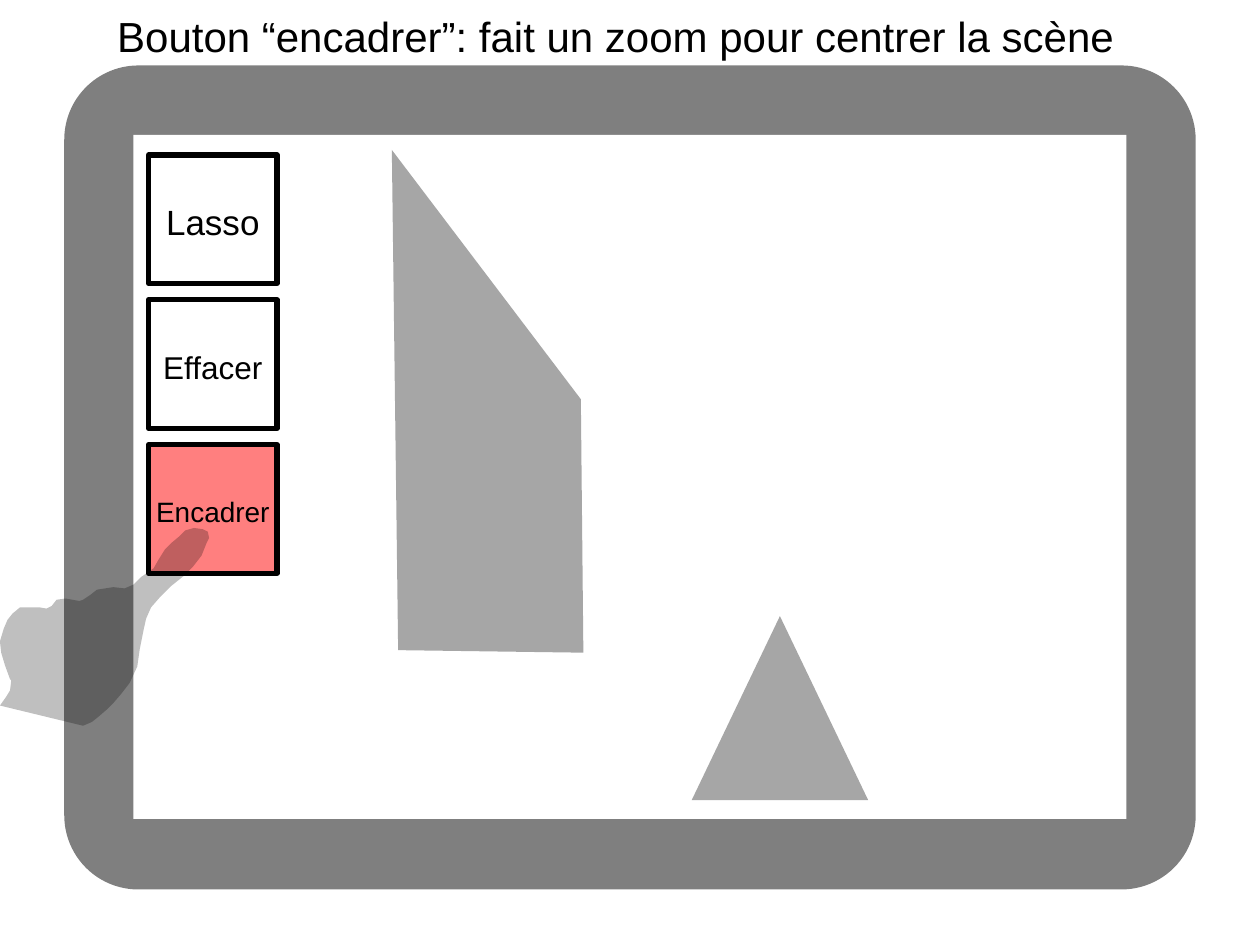
from collections import namedtuple

from lxml.etree import SubElement
from pptx import Presentation
from pptx.dml.color import RGBColor
from pptx.enum.shapes import MSO_SHAPE
from pptx.enum.text import MSO_ANCHOR, MSO_AUTO_SIZE, PP_ALIGN
from pptx.oxml.ns import qn
from pptx.util import Inches, Pt

COLORS = {"ink": "000000", "paper": "FFFFFF", "solid": "A6A6A6", "active": "FF0000"}
FONT = "Arial"
BUTTONS = [("Lasso", 20, "paper"), ("Effacer", 18, "paper"), ("Encadrer", 16, "active")]

# Outlines, each on its own grid of columns and rows
TOWER = [(3.3, 99.5), (0, 0), (98.7, 49.6), (100, 100)]
HAND = [
    (66, 157), (73, 154), (78, 150), (85, 144), (90, 139), (96, 132), (103, 123),
    (109, 110), (111, 96), (114, 81), (116, 72), (120, 63), (127, 55), (136, 46),
    (146, 38), (153, 31), (160, 22), (164, 12), (166, 8), (165, 3), (161, 1),
    (154, 0), (147, 2), (142, 7), (136, 12), (131, 17), (126, 25), (122, 32),
    (112, 39), (106, 45), (99, 48), (90, 47), (77, 49), (72, 53), (66, 57),
    (63, 58), (52, 56), (45, 57), (41, 62), (37, 64), (31, 63), (16, 63),
    (10, 68), (6, 73), (3, 80), (0, 90), (1, 99), (4, 109), (8, 120), (9, 121),
    (8, 129), (5, 134), (0, 141),
]

Box = namedtuple("Box", "x y w h")


def inner(box, x, y, w, h):
    """Return a box given in percent of the outer one."""
    return Box(
        round(box.x + box.w * x / 100),
        round(box.y + box.h * y / 100),
        round(box.w * w / 100),
        round(box.h * h / 100),
    )


def rgb(name):
    return RGBColor.from_string(COLORS[name])


def paint(shape, fill, alpha=100, line=None):
    """Set fill, opacity in percent and line width in points."""
    shape.shadow.inherit = False
    shape.fill.solid()
    shape.fill.fore_color.rgb = rgb(fill)
    if alpha < 100:
        color = shape.element.spPr.find(qn("a:solidFill"))[0]
        SubElement(color, qn("a:alpha")).set("val", str(alpha * 1000))
    if line:
        shape.line.color.rgb = rgb("ink")
        shape.line.width = Pt(line)
    else:
        shape.line.fill.background()
    return shape


def add_preset(slide, kind, box, fill, **style):
    return paint(slide.shapes.add_shape(kind, *box), fill, **style)


def add_outline(slide, box, points, cols, rows, fill, **style):
    """Draw a closed outline whose points lie on a grid over the box."""
    spots = [
        (round(box.x + box.w * x / cols), round(box.y + box.h * y / rows))
        for x, y in points
    ]
    pen = slide.shapes.build_freeform(*spots[0])
    pen.add_line_segments(spots[1:], close=True)
    return paint(pen.convert_to_shape(), fill, **style)


def write(shape, text, size, align=PP_ALIGN.CENTER, side=0, top=0, wrap=True):
    frame = shape.text_frame
    frame.auto_size = MSO_AUTO_SIZE.NONE
    frame.word_wrap = wrap
    frame.vertical_anchor = MSO_ANCHOR.MIDDLE
    frame.margin_left = frame.margin_right = Inches(side)
    frame.margin_top, frame.margin_bottom = Inches(top), 0
    line = frame.paragraphs[0]
    line.alignment = align
    run = line.add_run()
    run.text = text
    run.font.name = FONT
    run.font.size = Pt(size)
    run.font.color.rgb = rgb("ink")


def add_title(slide, box):
    title = slide.shapes.title
    title.left, title.top, title.width, title.height = box
    write(title, "Bouton “encadrer”: fait un zoom pour centrer la scène", 24,
          align=PP_ALIGN.LEFT, side=0.1)


def add_tablet(slide, box):
    """Draw the rounded frame and return the box of its screen."""
    frame = add_preset(slide, MSO_SHAPE.ROUNDED_RECTANGLE, box, "ink", alpha=50)
    frame.adjustments[0] = 0.09
    screen = inner(box, 6.12, 8.41, 87.75, 83.03)
    add_preset(slide, MSO_SHAPE.RECTANGLE, screen, "paper")
    return screen


def add_menu(slide, box):
    for row, (label, size, fill) in enumerate(BUTTONS):
        spot = inner(box, 1.52, 2.95 + row * 21.18, 12.94, 18.78)
        button = add_preset(slide, MSO_SHAPE.RECTANGLE, spot, fill, alpha=50, line=3)
        write(button, label, size, top=0.04, wrap=False)


def add_scene(slide, box):
    add_outline(slide, inner(box, 26.02, 2.21, 19.29, 73.48), TOWER, 100, 100, "solid")
    peak = inner(box, 56.22, 70.35, 17.77, 26.89)
    add_preset(slide, MSO_SHAPE.ISOSCELES_TRIANGLE, peak, "solid")


def main():
    deck = Presentation()
    deck.slide_width, deck.slide_height = Inches(10), Inches(7.5)
    slide = deck.slides.add_slide(deck.slide_layouts[5])
    page = Box(0, 0, deck.slide_width, deck.slide_height)

    add_title(slide, inner(page, 8.3, 0.4, 86.1, 6.8))
    screen = add_tablet(slide, inner(page, 5.1, 6.93, 89.8, 87.2))
    add_menu(slide, screen)
    add_outline(slide, inner(page, 0, 55.87, 16.6, 20.93), HAND, 166, 157, "ink", alpha=25)
    add_scene(slide, screen)
    deck.save("out.pptx")


if __name__ == "__main__":
    main()
